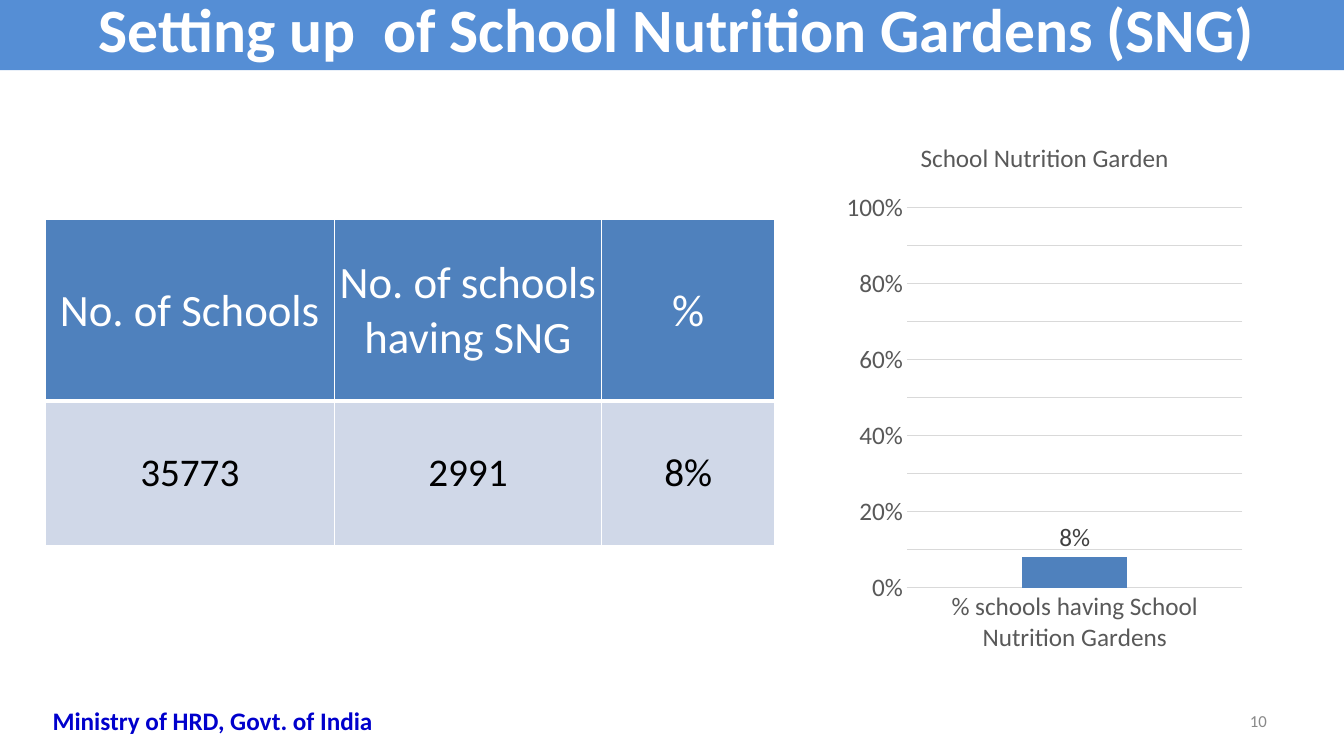
from lxml.etree import SubElement
from pptx import Presentation
from pptx.chart.data import CategoryChartData
from pptx.dml.color import RGBColor
from pptx.enum.chart import XL_CHART_TYPE, XL_LABEL_POSITION, XL_TICK_MARK
from pptx.enum.shapes import MSO_SHAPE
from pptx.enum.text import MSO_ANCHOR, PP_ALIGN
from pptx.oxml import parse_xml
from pptx.oxml.ns import nsdecls, qn
from pptx.util import Cm, Pt

FONT = "Calibri"
COLORS = {
    "banner": "558ED5", "accent": "4F81BD", "band": "D0D8E8",
    "white": "FFFFFF", "black": "000000", "footer": "0000CC",
    "number": "898989", "axis": "595959", "label": "404040", "grid": "D9D9D9",
}

# Boxes are left, top, width, height in centimetres.
BANNER = {"text": "Setting up  of School Nutrition Gardens (SNG)",
          "box": (0, -0.36, 34.14, 2.13), "align": PP_ALIGN.CENTER,
          "anchor": MSO_ANCHOR.MIDDLE,
          "font": {"size": 44, "color": "white", "bold": True}}
CAPTIONS = [
    {"text": "10", "box": (24.28, 17.65, 7.9, 1.02), "align": PP_ALIGN.RIGHT,
     "anchor": MSO_ANCHOR.MIDDLE, "font": {"size": 12, "color": "number"}},
    {"text": "Ministry of HRD, Govt. of India", "box": (0.38, 17.65, 9.96, 1.02),
     "align": PP_ALIGN.CENTER, "anchor": MSO_ANCHOR.TOP,
     "font": {"size": 18, "color": "footer", "bold": True}},
]

TABLE_ORIGIN = (1.14, 5.54)
COLUMN_WIDTHS = (7.29, 6.73, 4.37)
TABLE_ROWS = [
    {"texts": ("No. of Schools", "No. of schools having SNG", "%"),
     "height": 4.57, "fill": "accent", "inset": 0.02, "bottom_line": 3,
     "font": {"size": 32, "color": "white"}},
    {"texts": ("35773", "2991", "8%"),
     "height": 3.63, "fill": "band", "inset": 0, "bottom_line": 1,
     "font": {"size": 28, "color": "black"}},
]

CHART = {"title": "School Nutrition Garden", "box": (21.13, 3, 10.39, 13.72),
         "categories": ["% schools having School Nutrition Gardens"],
         "series": "Series 1", "values": [0.08]}
AXIS_FONT = {"size": 18, "color": "axis", "bold": False}
LABEL_FONT = {"size": 18, "color": "label", "bold": False}


def rgb(name):
    return RGBColor.from_string(COLORS[name])


def style_font(font, size, color, bold=False):
    for attribute, value in {"name": FONT, "size": Pt(size), "bold": bold}.items():
        setattr(font, attribute, value)
    font.color.rgb = rgb(color)


def paint(fill, color):
    fill.solid()
    fill.fore_color.rgb = rgb(color)


def write(frame, text, font, align):
    frame.word_wrap = True
    paragraph = frame.paragraphs[0]
    paragraph.alignment = align
    run = paragraph.add_run()
    run.text = text
    style_font(run.font, **font)


def add_caption(shape, caption):
    shape.text_frame.vertical_anchor = caption["anchor"]
    write(shape.text_frame, caption["text"], caption["font"], caption["align"])


def add_banner(slide):
    banner = slide.shapes.add_shape(MSO_SHAPE.RECTANGLE, *map(Cm, BANNER["box"]))
    banner.shadow.inherit = False
    paint(banner.fill, "banner")
    banner.line.fill.background()
    add_caption(banner, BANNER)


def border_cell(cell, bottom_line):
    """Give the cell white borders, placed ahead of its fill as the schema asks."""
    properties = cell._tc.get_or_add_tcPr()
    widths = {"lnL": 1, "lnR": 1, "lnT": 1, "lnB": bottom_line}
    for index, (side, width) in enumerate(widths.items()):
        line = parse_xml(f'<a:{side} {nsdecls("a")} w="{Pt(width)}"/>')
        solid = SubElement(line, qn("a:solidFill"))
        SubElement(solid, qn("a:srgbClr"), val=COLORS["white"])
        properties.insert(index, line)


def add_school_table(slide):
    height = sum(row["height"] for row in TABLE_ROWS)
    box = (*TABLE_ORIGIN, sum(COLUMN_WIDTHS), height)
    table = slide.shapes.add_table(
        len(TABLE_ROWS), len(COLUMN_WIDTHS), *map(Cm, box)).table
    for column, width in zip(table.columns, COLUMN_WIDTHS):
        column.width = Cm(width)
    for row, content in zip(table.rows, TABLE_ROWS):
        row.height = Cm(content["height"])
        inset = Cm(content["inset"])
        cell_format = {"margin_left": inset, "margin_right": inset,
                       "margin_top": inset, "margin_bottom": 0,
                       "vertical_anchor": MSO_ANCHOR.MIDDLE}
        for cell, text in zip(row.cells, content["texts"]):
            for attribute, value in cell_format.items():
                setattr(cell, attribute, value)
            write(cell.text_frame, text, content["font"], PP_ALIGN.CENTER)
            paint(cell.fill, content["fill"])
            border_cell(cell, content["bottom_line"])


def add_garden_chart(slide):
    data = CategoryChartData(number_format="0%")
    data.categories = CHART["categories"]
    data.add_series(CHART["series"], CHART["values"])
    chart = slide.shapes.add_chart(
        XL_CHART_TYPE.COLUMN_CLUSTERED, *map(Cm, CHART["box"]), data).chart
    style_font(chart.font, 10, "black")
    chart.has_legend = False
    chart.has_title = True
    write(chart.chart_title.text_frame, CHART["title"], AXIS_FONT, PP_ALIGN.CENTER)

    categories, percents = chart.category_axis, chart.value_axis
    for axis in (categories, percents):
        axis.major_tick_mark = axis.minor_tick_mark = XL_TICK_MARK.NONE
        style_font(axis.tick_labels.font, **AXIS_FONT)
    percents.minimum_scale, percents.maximum_scale = 0, 1
    percents.tick_labels.number_format = "0%"
    percents.tick_labels.number_format_is_linked = False
    percents.format.line.fill.background()
    for line in (categories.format.line, percents.major_gridlines.format.line):
        line.width = Pt(0.75)
        paint(line.fill, "grid")

    plot = chart.plots[0]
    plot_format = {"gap_width": 219, "overlap": -27,
                   "vary_by_categories": False, "has_data_labels": True}
    for attribute, value in plot_format.items():
        setattr(plot, attribute, value)
    paint(plot.series[0].format.fill, "accent")
    label_format = {"show_value": True, "number_format": "0%",
                    "number_format_is_linked": False,
                    "position": XL_LABEL_POSITION.OUTSIDE_END}
    for attribute, value in label_format.items():
        setattr(plot.data_labels, attribute, value)
    style_font(plot.data_labels.font, **LABEL_FONT)


def main():
    deck = Presentation()
    deck.slide_width, deck.slide_height = Cm(33.87), Cm(19.05)
    slide = deck.slides.add_slide(deck.slide_layouts[6])
    add_banner(slide)
    add_school_table(slide)
    for caption in CAPTIONS:
        add_caption(slide.shapes.add_textbox(*map(Cm, caption["box"])), caption)
    add_garden_chart(slide)
    deck.save("out.pptx")


if __name__ == "__main__":
    main()
